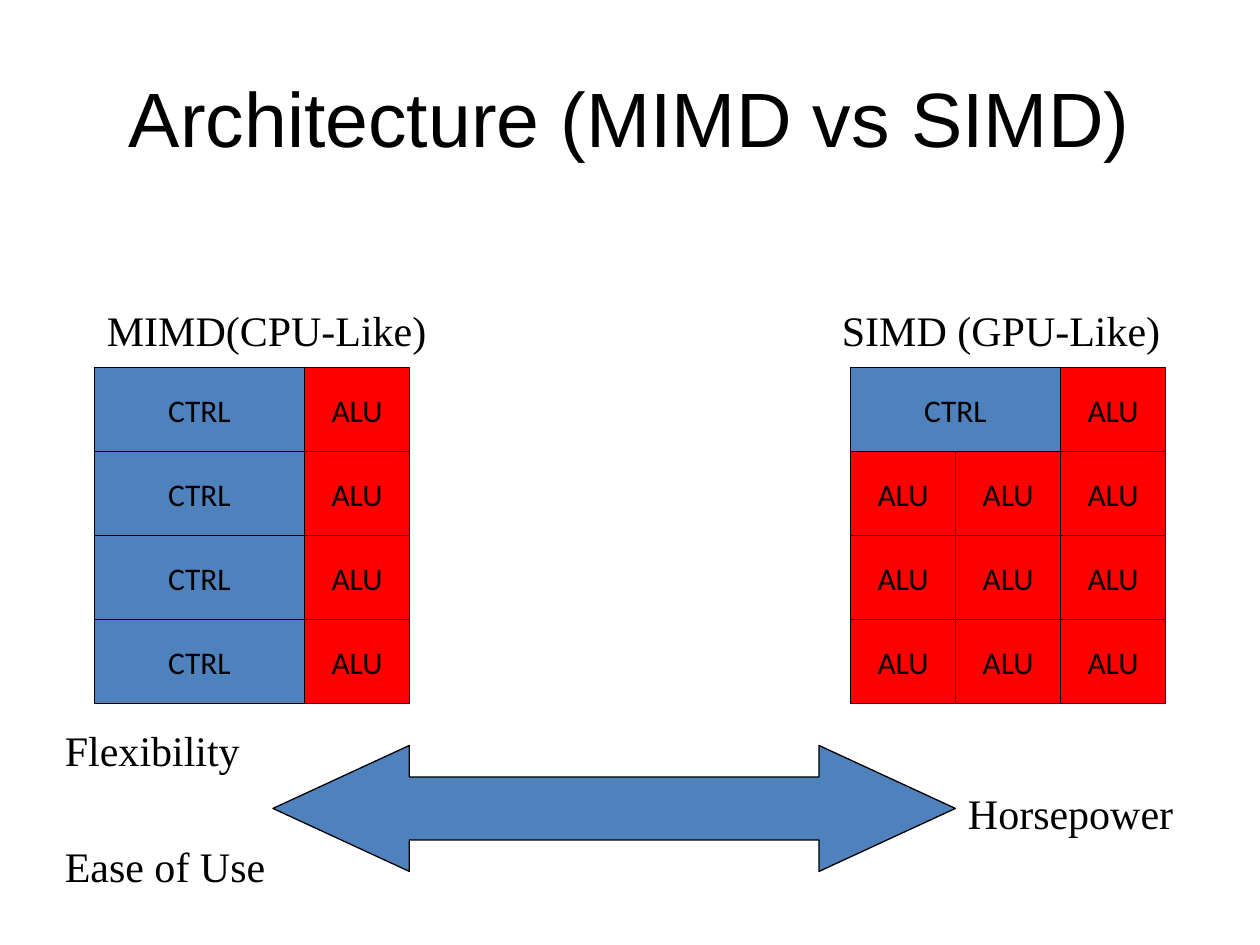
from pptx import Presentation
from pptx.dml.color import RGBColor
from pptx.enum.shapes import MSO_SHAPE
from pptx.enum.text import MSO_ANCHOR, PP_ALIGN
from pptx.util import Pt

RECT = MSO_SHAPE.RECTANGLE
ARROW = MSO_SHAPE.LEFT_RIGHT_ARROW
MIDDLE = MSO_ANCHOR.MIDDLE
TOP = MSO_ANCHOR.TOP
LEFT = PP_ALIGN.LEFT
CENTER = PP_ALIGN.CENTER

COLORS = {"ctrl": "4F81BD", "alu": "FF0000", "ink": "000000"}
UNIT_W, UNIT_H = 60, 48
GRID_TOP = 210
MIMD = [["CTRL", "ALU"]] * 4
SIMD = [["CTRL", "ALU"]] + [["ALU"] * 3] * 3
SPANS = {"CTRL": 2, "ALU": 1}


def color(name):
    return RGBColor.from_string(COLORS[name])


def write(frame, text, size=24, font="Times New Roman", align=LEFT,
          anchor=TOP, wrap=True):
    frame.word_wrap = wrap
    frame.vertical_anchor = anchor
    para = frame.paragraphs[0]
    para.alignment = align
    run = para.add_run()
    run.text = text
    run.font.size = Pt(size)
    run.font.name = font
    run.font.color.rgb = color("ink")


def add_title(slide, text):
    title = slide.shapes.title
    title.left, title.top = Pt(36), Pt(21.6)
    title.width, title.height = Pt(648), Pt(90)
    write(title.text_frame, text, size=44, font="Arial",
          align=CENTER, anchor=MIDDLE)


def add_block(slide, kind, left, top, width, height, fill):
    block = slide.shapes.add_shape(
        kind, Pt(left), Pt(top), Pt(width), Pt(height))
    block.shadow.inherit = False
    block.fill.solid()
    block.fill.fore_color.rgb = color(fill)
    block.line.color.rgb = color("ink")
    block.line.width = Pt(0.75)
    return block


def add_grid(slide, left, rows):
    """Lay out rows of units, where a CTRL unit spans two columns."""
    for i, row in enumerate(rows):
        x = left
        for unit in row:
            width = SPANS[unit] * UNIT_W
            block = add_block(slide, RECT, x, GRID_TOP + i * UNIT_H,
                              width, UNIT_H, unit.lower())
            write(block.text_frame, unit, size=18, font="Calibri",
                  align=CENTER, anchor=MIDDLE, wrap=False)
            x += width


def add_label(slide, text, left, top, width):
    box = slide.shapes.add_textbox(Pt(left), Pt(top), Pt(width), Pt(36))
    frame = box.text_frame
    frame.margin_top, frame.margin_bottom = Pt(6), Pt(2)
    write(frame, text)


def main():
    deck = Presentation()
    deck.slide_width, deck.slide_height = Pt(720), Pt(540)
    slide = deck.slides.add_slide(deck.slide_layouts.get_by_name("Title Only"))

    add_title(slide, "Architecture (MIMD vs SIMD)")
    add_grid(slide, 54, MIMD)
    add_grid(slide, 486, SIMD)
    arrow = add_block(slide, ARROW, 156, 426, 390, 72, "ctrl")
    arrow.adjustments[0] = 0.5
    arrow.adjustments[1] = 1.083

    for text, left, top, width in (
        ("MIMD(CPU-Like)", 54, 168, 246),
        ("SIMD (GPU-Like)", 474, 168, 246),
        ("Flexibility", 30, 408, 126),
        ("Horsepower", 546, 444, 162),
        ("Ease of Use", 30, 474, 144),
    ):
        add_label(slide, text, left, top, width)

    deck.save("out.pptx")


if __name__ == "__main__":
    main()
